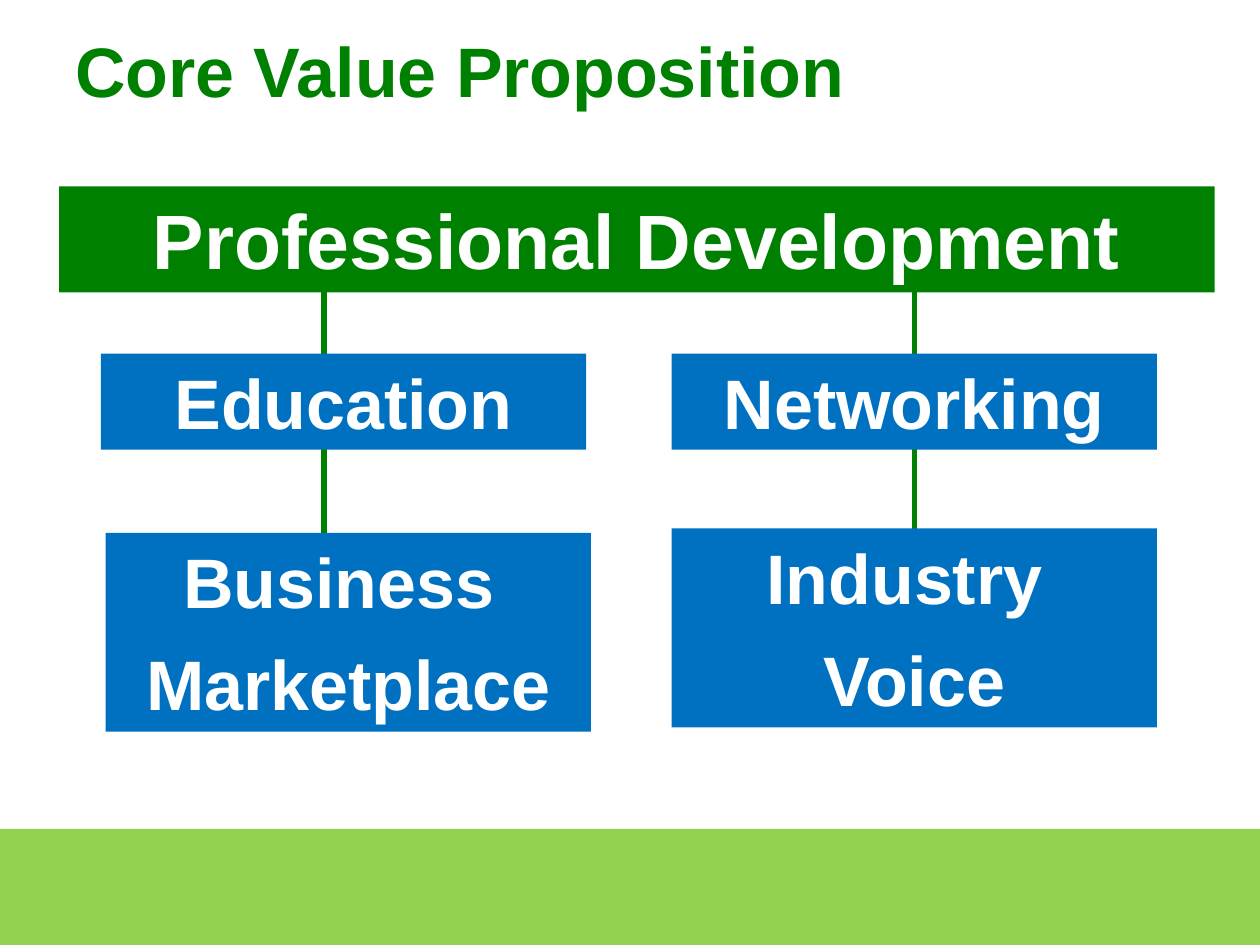
import collections
import dataclasses

import lxml.etree
import pptx
import pptx.dml.color
import pptx.enum.shapes
import pptx.enum.text
import pptx.oxml.ns
import pptx.util

Box = collections.namedtuple("Box", "left top width height")


@dataclasses.dataclass(frozen=True)
class Theme:
    """Colours, font and sizes of the slide."""
    green: str = "008000"
    blue: str = "0070C0"
    lime: str = "92D050"
    white: str = "FFFFFF"
    font: str = "Arial"
    title_size: int = 40
    banner_size: int = 44
    card_size: int = 40
    line_gap: int = 10
    line_width: int = 3


THEME = Theme()
BRANCHES = (("Education", ("Business ", "Marketplace")),
            ("Networking", ("Industry ", "Voice")))


def colour(value):
    """Turn a hex string into a colour."""
    return pptx.dml.color.RGBColor.from_string(value)


def inches(box):
    """Turn the four lengths of a box into inches."""
    return [pptx.util.Inches(length) for length in box]


def part(box, left, top, width, height):
    """Find a box from its shares of another box."""
    return Box(box.left + left * box.width, box.top + top * box.height,
               width * box.width, height * box.height)


def write(shape, lines, size, ink, align):
    """Write bold lines into a shape from its top edge."""
    frame = shape.text_frame
    frame.word_wrap = True
    frame.vertical_anchor = pptx.enum.text.MSO_ANCHOR.TOP
    formats = {"name": THEME.font, "size": pptx.util.Pt(size), "bold": True}
    for index, line in enumerate(lines):
        para = frame.add_paragraph() if index else frame.paragraphs[0]
        para.alignment = align
        if index:
            para.space_before = pptx.util.Pt(THEME.line_gap)
        span = para.add_run()
        span.text = line
        for name, value in formats.items():
            setattr(span.font, name, value)
        span.font.color.rgb = colour(ink)


def add_block(page, box, fill, lines=(), size=THEME.card_size):
    """Draw a filled rectangle with centred white lines."""
    shape = page.shapes.add_shape(
        pptx.enum.shapes.MSO_SHAPE.RECTANGLE, *inches(box))
    shape.shadow.inherit = False
    shape.fill.solid()
    shape.fill.fore_color.rgb = colour(fill)
    shape.line.fill.background()
    write(shape, lines, size, THEME.white, pptx.enum.text.PP_ALIGN.CENTER)


def add_title(page, box, text):
    """Place the slide title."""
    shape = page.shapes.add_textbox(*inches(box))
    write(shape, [text], THEME.title_size, THEME.green,
          pptx.enum.text.PP_ALIGN.LEFT)


def add_stem(page, box):
    """Draw a vertical line down the left edge of a box."""
    left, top, bottom = inches((box.left, box.top, box.top + box.height))
    stem = page.shapes.add_connector(
        pptx.enum.shapes.MSO_CONNECTOR.STRAIGHT, left, top, left, bottom)
    stem.line.color.rgb = colour(THEME.green)
    stem.line.width = pptx.util.Pt(THEME.line_width)
    lxml.etree.SubElement(stem._element.spPr,
                          pptx.oxml.ns.qn("a:effectLst"))


def add_branch(page, box, upper, lower, stem, shift):
    """Draw a stem with a one-line card and a two-line card on it."""
    add_stem(page, part(box, stem, 0, 0, 0.6))
    add_block(page, part(box, 0, 0.14, 1, 0.22), THEME.blue, [upper])
    add_block(page, part(box, shift, 0.54 + shift, 1, 0.455), THEME.blue, lower)


def add_diagram(page, box):
    """Draw the banner and the two branches below it."""
    columns = ((0.036, 0.46, 0.01), (0.53, 0.5, 0))
    for (upper, lower), (left, stem, shift) in zip(BRANCHES, columns):
        add_branch(page, part(box, left, 0.195, 0.42, 0.805),
                   upper, lower, stem, shift)
    add_block(page, part(box, 0, 0, 1, 0.195), THEME.green,
              ["Professional Development"], THEME.banner_size)


def main():
    """Build the deck and save it."""
    deck = pptx.Presentation()
    deck.slide_width, deck.slide_height = inches((10, 7.5))
    page = deck.slides.add_slide(deck.slide_layouts[6])
    whole = Box(0, 0, 10, 7.5)
    add_block(page, part(whole, 0, 0.877, 1, 0.123), THEME.lime)
    add_title(page, Box(0.5, 0.17, 8.64, 0.77), "Core Value Proposition")
    add_diagram(page, Box(0.47, 1.48, 9.17, 4.31))
    deck.save("out.pptx")


if __name__ == "__main__":
    main()
